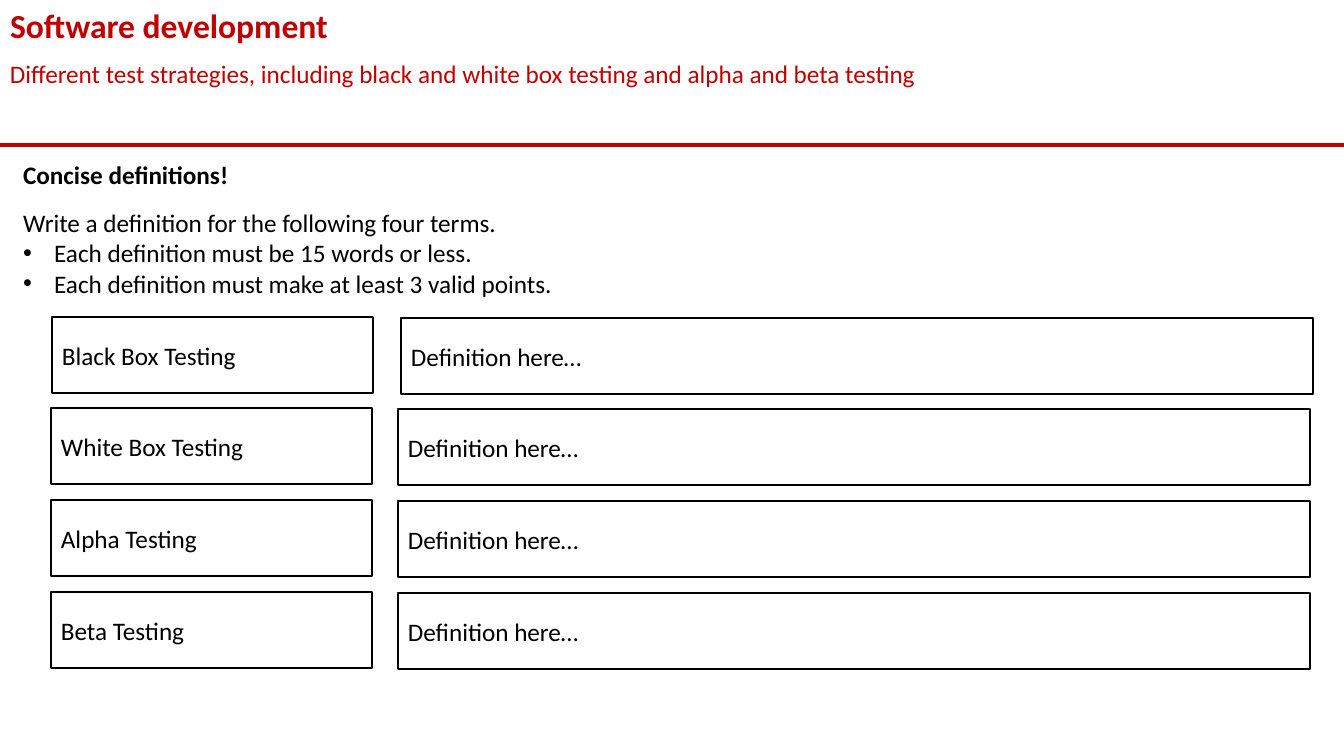
"""Build a worksheet slide asking for concise definitions of four testing terms."""
from lxml.etree import SubElement
from pptx import Presentation
from pptx.dml.color import RGBColor
from pptx.enum.shapes import MSO_CONNECTOR, MSO_SHAPE
from pptx.enum.text import MSO_ANCHOR, MSO_AUTO_SIZE, PP_ALIGN
from pptx.oxml.ns import qn
from pptx.util import Pt

THEME = {
    "font": "Calibri",
    "accent": RGBColor(0xC0, 0x00, 0x00),
    "ink": RGBColor(0x00, 0x00, 0x00),
    "title": Pt(24),
    "text": Pt(18),
    "rule": Pt(2.25),
    "border": Pt(1),
}


def px(length):
    """Turn slide pixels into EMU."""
    return round(length * 914400 / 100.8)


def write(paragraph, text, color=THEME["ink"], size=THEME["text"], bold=False):
    """Fill one left-aligned paragraph and set its font."""
    paragraph.text = text
    paragraph.alignment = PP_ALIGN.LEFT
    font = paragraph.font
    font.name, font.size, font.bold = THEME["font"], size, bold
    font.color.rgb = color


deck = Presentation()
deck.slide_width, deck.slide_height = px(1344), px(756)
slide = deck.slides.add_slide(deck.slide_layouts[1])
title, task = slide.placeholders
topic = slide.shapes.add_textbox(0, px(53), px(1344), px(40))

for part, (left, top, width, height) in (
    (title, (0, 0, 1344, 50)),
    (task, (13, 154, 1317, 156)),
):
    part.left, part.top, part.width, part.height = px(left), px(top), px(width), px(height)
for part in (title, topic, task):
    frame = part.text_frame
    frame.word_wrap = True
    frame.auto_size = MSO_AUTO_SIZE.NONE
    frame.vertical_anchor = MSO_ANCHOR.TOP

write(title.text_frame.paragraphs[0], "Software development",
      THEME["accent"], THEME["title"], True)
write(topic.text_frame.paragraphs[0],
      "Different test strategies, including black and white box testing and alpha and beta testing",
      THEME["accent"])

divider = slide.shapes.add_connector(MSO_CONNECTOR.STRAIGHT, 0, px(145), px(1344), px(145))
divider.line.color.rgb = THEME["accent"]
divider.line.width = THEME["rule"]
SubElement(divider._element.spPr, qn("a:effectLst"))

instructions = (
    ("Concise definitions!", True, False, 0),
    ("Write a definition for the following four terms.", False, False, 13),
    ("Each definition must be 15 words or less.", False, True, 0),
    ("Each definition must make at least 3 valid points.", False, True, 0),
)
for index, (text, bold, bulleted, gap) in enumerate(instructions):
    frame = task.text_frame
    line = frame.add_paragraph() if index else frame.paragraphs[0]
    line.space_before = Pt(gap)
    indent = px(31) if bulleted else 0
    properties = line._p.get_or_add_pPr()
    properties.set("marL", str(indent))
    properties.set("indent", str(-indent))
    if bulleted:
        SubElement(properties, qn("a:buFont"), typeface="Arial")
        SubElement(properties, qn("a:buChar"), char="•")
    else:
        SubElement(properties, qn("a:buNone"))
    write(line, text, bold=bold)

rows = (
    ("Black Box Testing", 317, 52, 401),
    ("White Box Testing", 408, 51, 398),
    ("Alpha Testing", 500, 51, 398),
    ("Beta Testing", 592, 51, 398),
)
for term, top, term_left, answer_left in rows:
    for text, left, box_top, width in (
        (term, term_left, top, 321),
        ("Definition here…", answer_left, top + 1, 912),
    ):
        box = slide.shapes.add_shape(
            MSO_SHAPE.RECTANGLE, px(left), px(box_top), px(width), px(76))
        box.shadow.inherit = False
        box.fill.background()
        box.line.color.rgb = THEME["ink"]
        box.line.width = THEME["border"]
        box.text_frame.word_wrap = True
        box.text_frame.vertical_anchor = MSO_ANCHOR.MIDDLE
        write(box.text_frame.paragraphs[0], text)

deck.save("out.pptx")
